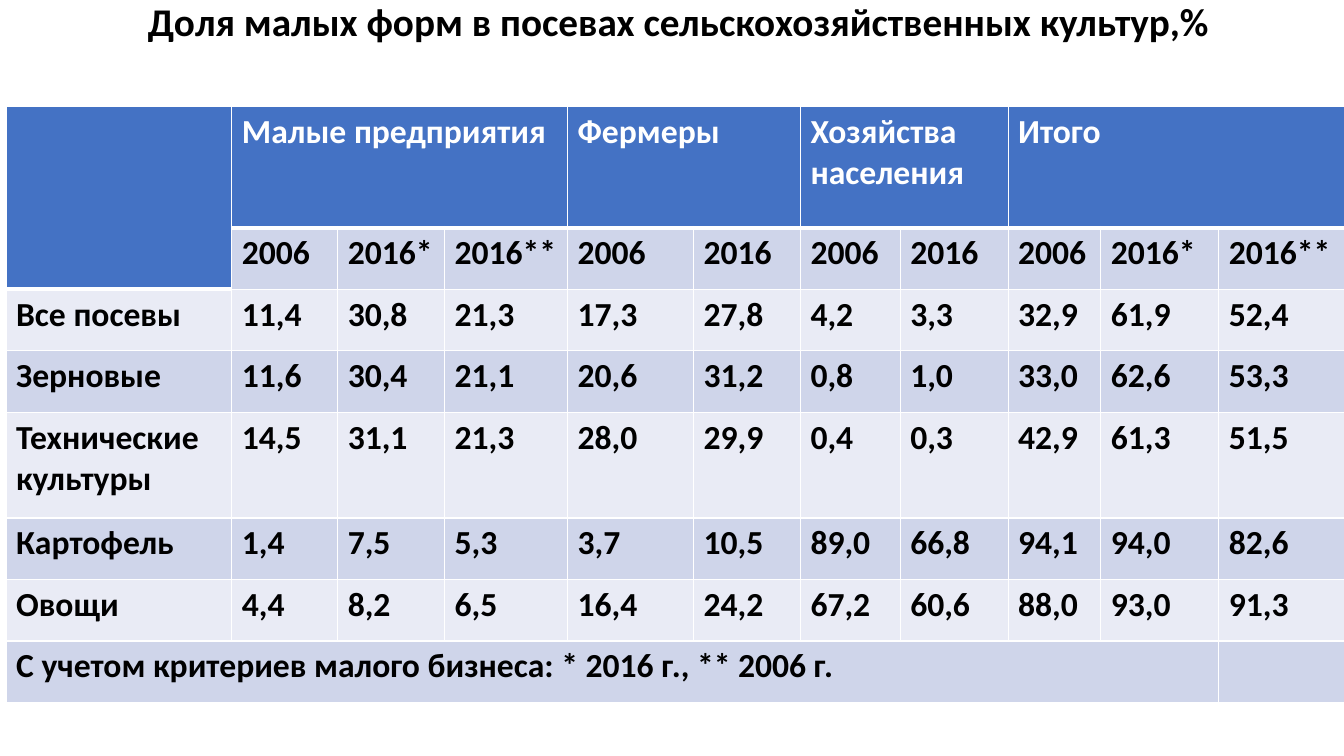
from lxml import etree
from pptx import Presentation
from pptx.dml.color import RGBColor
from pptx.enum.text import MSO_ANCHOR, PP_ALIGN
from pptx.oxml.ns import qn
from pptx.util import Inches, Pt

CENTER = PP_ALIGN.CENTER
MIDDLE = MSO_ANCHOR.MIDDLE

BLACK = RGBColor(0x00, 0x00, 0x00)
WHITE = RGBColor(0xFF, 0xFF, 0xFF)
HEADER_BLUE = RGBColor(0x44, 0x72, 0xC4)
BAND_DARK = RGBColor(0xCF, 0xD5, 0xEA)
BAND_LIGHT = RGBColor(0xE9, 0xEB, 0xF5)

FONT = "Calibri"
THIN, THICK = 1, 3

TITLE = "Доля малых форм в посевах сельскохозяйственных культур,%"
NOTE = "С учетом критериев малого бизнеса: * 2016 г., ** 2006 г."

# Producer groups with the years shown under each
GROUPS = [
    ("Малые предприятия", ["2006", "2016*", "2016**"]),
    ("Фермеры", ["2006", "2016"]),
    ("Хозяйства населения", ["2006", "2016"]),
    ("Итого", ["2006", "2016*", "2016**"]),
]
CROPS = [
    ("Все посевы", "11,4 30,8 21,3 17,3 27,8 4,2 3,3 32,9 61,9 52,4"),
    ("Зерновые", "11,6 30,4 21,1 20,6 31,2 0,8 1,0 33,0 62,6 53,3"),
    ("Технические культуры", "14,5 31,1 21,3 28,0 29,9 0,4 0,3 42,9 61,3 51,5"),
    ("Картофель", "1,4 7,5 5,3 3,7 10,5 89,0 66,8 94,1 94,0 82,6"),
    ("Овощи", "4,4 8,2 6,5 16,4 24,2 67,2 60,6 88,0 93,0 91,3"),
]
COLUMN_WIDTHS = [2.24, 1.05, 1.06, 1.22, 1.25, 1.06, 0.99, 1.07, 0.92, 1.17, 1.3]
ROW_HEIGHTS = [1.2, 0.61, 0.61, 0.61, 1.05, 0.61, 0.61, 0.61]


def format_text(paragraph, size, color):
    for run in paragraph.runs:
        run.font.name = FONT
        run.font.size = Pt(size)
        run.font.bold = True
        run.font.color.rgb = color


def add_title(slide):
    box = slide.shapes.add_textbox(
        Inches(1.03), Inches(-0.43), Inches(11.39), Inches(1.33))
    frame = box.text_frame
    frame.word_wrap = True
    frame.vertical_anchor = MIDDLE
    frame.text = TITLE
    paragraph = frame.paragraphs[0]
    paragraph.alignment = CENTER
    paragraph.line_spacing = 0.9
    format_text(paragraph, 28, BLACK)


def is_header(row, column):
    return row == 0 or (row == 1 and column == 0)


def set_borders(cell, row, column):
    """White grid, with a thicker line along the foot of the header."""
    header = is_header(row, column)
    top = THICK if row > 0 and is_header(row - 1, column) and not header else THIN
    bottom = THICK if header and not is_header(row + 1, column) else THIN
    if cell.is_merge_origin and header:
        bottom = THICK
    properties = cell._tc.get_or_add_tcPr()
    edges = [("a:lnL", THIN), ("a:lnR", THIN), ("a:lnT", top), ("a:lnB", bottom)]
    for position, (tag, width) in enumerate(edges):
        line = etree.Element(qn(tag), w=str(Pt(width)))
        fill = etree.SubElement(line, qn("a:solidFill"))
        etree.SubElement(fill, qn("a:srgbClr"), val=str(WHITE))
        properties.insert(position, line)


def style_cell(cell, row, column):
    header = is_header(row, column)
    band = BAND_LIGHT if row % 2 == 0 else BAND_DARK
    # The note row keeps the darker band
    if row == len(ROW_HEIGHTS) - 1:
        band = BAND_DARK
    cell.fill.solid()
    cell.fill.fore_color.rgb = HEADER_BLUE if header else band
    set_borders(cell, row, column)
    format_text(cell.text_frame.paragraphs[0], 24, WHITE if header else BLACK)


def fill_header(table):
    table.cell(0, 0).merge(table.cell(1, 0))
    column = 1
    for name, years in GROUPS:
        table.cell(0, column).merge(table.cell(0, column + len(years) - 1))
        table.cell(0, column).text_frame.text = name
        for offset, year in enumerate(years):
            table.cell(1, column + offset).text_frame.text = year
        column += len(years)


def fill_body(table):
    for row, (crop, shares) in enumerate(CROPS, start=2):
        for column, value in enumerate([crop] + shares.split()):
            table.cell(row, column).text_frame.text = value
    last_row = len(ROW_HEIGHTS) - 1
    table.cell(last_row, 0).merge(table.cell(last_row, len(COLUMN_WIDTHS) - 2))
    table.cell(last_row, 0).text_frame.text = NOTE


def add_share_table(slide):
    table = slide.shapes.add_table(
        len(ROW_HEIGHTS), len(COLUMN_WIDTHS), Inches(0.06), Inches(1.06),
        Inches(sum(COLUMN_WIDTHS)), Inches(sum(ROW_HEIGHTS))).table
    for column, width in zip(table.columns, COLUMN_WIDTHS):
        column.width = Inches(width)
    for row, height in zip(table.rows, ROW_HEIGHTS):
        row.height = Inches(height)
    fill_header(table)
    fill_body(table)
    for row in range(len(ROW_HEIGHTS)):
        for column in range(len(COLUMN_WIDTHS)):
            style_cell(table.cell(row, column), row, column)


def main():
    presentation = Presentation()
    presentation.slide_width = Inches(13.33)
    presentation.slide_height = Inches(7.5)
    slide = presentation.slides.add_slide(presentation.slide_layouts[6])
    add_title(slide)
    add_share_table(slide)
    presentation.save("out.pptx")


if __name__ == "__main__":
    main()
